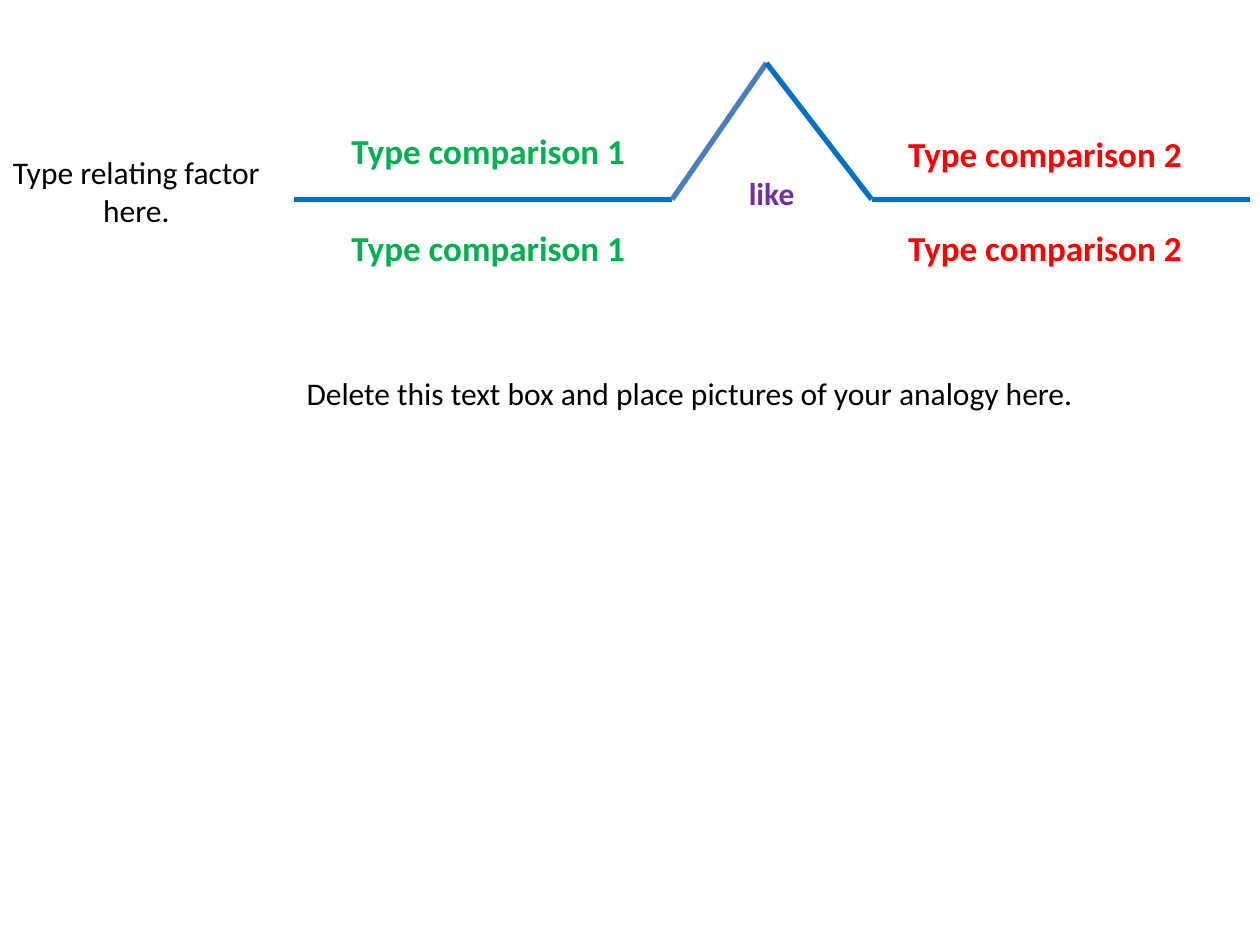
from itertools import pairwise

from lxml.etree import SubElement
from pptx import Presentation
from pptx.dml.color import RGBColor
from pptx.enum.shapes import MSO_CONNECTOR
from pptx.enum.text import MSO_AUTO_SIZE, PP_ALIGN
from pptx.oxml.ns import qn
from pptx.util import Cm, Pt

BLACK = RGBColor(0x00, 0x00, 0x00)
BLUE = RGBColor(0x00, 0x70, 0xC0)
SOFT_BLUE = RGBColor(0x4B, 0x7E, 0xBC)
GREEN = RGBColor(0x00, 0xB0, 0x50)
RED = RGBColor(0xFF, 0x00, 0x00)
PURPLE = RGBColor(0x70, 0x30, 0xA0)

# Lengths in centimetres
BASELINE, PEAK = 4.02, 1.27
BRIDGE_POINTS = [(5.93, BASELINE), (13.55, BASELINE), (15.45, PEAK),
                 (17.57, BASELINE), (25.19, BASELINE)]
BRIDGE_COLORS = [BLUE, SOFT_BLUE, BLUE, BLUE]

RELATING_FACTOR = "Type relating factor here."
LINK_WORD = "like"
PICTURE_HINT = "Delete this text box and place pictures of your analogy here."
# text, colour, left, top above the line
COMPARISONS = [
    ("Type comparison 1", GREEN, 5.93, 2.49),
    ("Type comparison 2", RED, 17.15, 2.54),
]
BELOW_LINE = 4.45
COMPARISON_WIDTH, COMPARISON_HEIGHT = 7.83, 1.11


def add_text(slide, text, left, top, width, height, *, size=18, color=BLACK,
             bold=False, align=PP_ALIGN.CENTER):
    box = slide.shapes.add_textbox(Cm(left), Cm(top), Cm(width), Cm(height))
    frame = box.text_frame
    frame.word_wrap = True
    frame.auto_size = MSO_AUTO_SIZE.SHAPE_TO_FIT_TEXT
    paragraph = frame.paragraphs[0]
    paragraph.alignment = align
    run = paragraph.add_run()
    run.text = text
    run.font.name = "Calibri"
    run.font.size = Pt(size)
    run.font.bold = bold
    run.font.color.rgb = color


def add_line(slide, start, end, color):
    line = slide.shapes.add_connector(
        MSO_CONNECTOR.STRAIGHT, *map(Cm, start + end))
    line.line.color.rgb = color
    line.line.width = Pt(3)
    SubElement(line._element.spPr, qn("a:effectLst"))


def main():
    prs = Presentation()
    prs.slide_width, prs.slide_height = Cm(25.4), Cm(19.05)
    slide = prs.slides.add_slide(prs.slide_layouts[6])

    for (start, end), color in zip(pairwise(BRIDGE_POINTS), BRIDGE_COLORS):
        add_line(slide, start, end, color)

    add_text(slide, RELATING_FACTOR, 0, 2.97, 5.5, 1.8)
    for comparison, color, left, above_line in COMPARISONS:
        for top in (above_line, BELOW_LINE):
            add_text(slide, comparison, left, top, COMPARISON_WIDTH,
                     COMPARISON_HEIGHT, size=20, color=color, bold=True)
    add_text(slide, LINK_WORD, 14.39, 3.39, 2.33, 1.03,
             color=PURPLE, bold=True)
    add_text(slide, PICTURE_HINT, 5.93, 7.41, 18.84, 1.03,
             align=PP_ALIGN.LEFT)

    prs.save("out.pptx")


if __name__ == "__main__":
    main()
